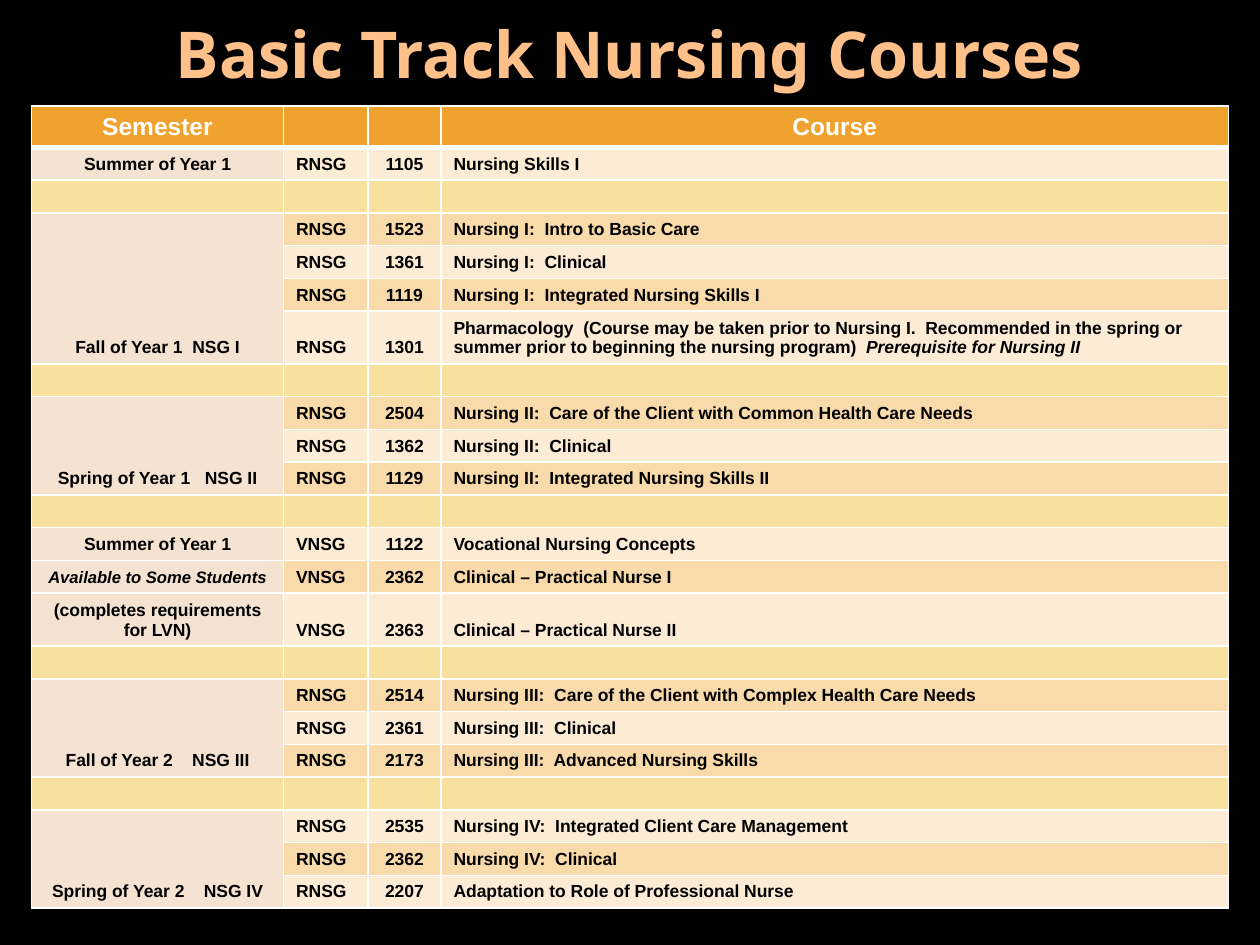
from dataclasses import dataclass
from typing import NamedTuple

from lxml import etree
from pptx import Presentation
from pptx.dml.color import RGBColor
from pptx.enum.text import MSO_ANCHOR, MSO_AUTO_SIZE, PP_ALIGN
from pptx.oxml.ns import qn
from pptx.util import Emu, Pt

CENTER, LEFT = PP_ALIGN.CENTER, PP_ALIGN.LEFT
MIDDLE, BOTTOM = MSO_ANCHOR.MIDDLE, MSO_ANCHOR.BOTTOM
NO_AUTOFIT = MSO_AUTO_SIZE.NONE
EMU_PER_PX = 9144


@dataclass(frozen=True)
class Theme:
    background: str = "000000"
    title: str = "FFC089"
    header: str = "F0A22E"
    header_text: str = "FFFFFF"
    text: str = "000000"
    semester: str = "F5E3D1"
    gap: str = "F8E19F"
    bands: tuple[str, str] = ("FCECD5", "F9DAAB")
    border: str = "FFFFFF"
    title_font: str = "Noto Sans"
    table_font: str = "Arial"
    title_size: float = 36.9
    header_size: float = 14
    body_size: float = 10
    note_size: float = 9.5
    border_width: float = 1
    header_rule: float = 3


class Course(NamedTuple):
    prefix: str
    number: str
    name: str
    note: str = ""


class Label(NamedTuple):
    text: str
    italic: bool = False


class Semester(NamedTuple):
    labels: list[Label]
    courses: list[Course]


THEME = Theme()
COLUMNS = (200, 67, 58, 625)
HEADER_HEIGHT, ROW_HEIGHT, TALL_HEIGHT = 33, 26, 42
TALL_COURSES = {"1301", "2363"}
HEADINGS = ("Semester", "", "", "Course")
SEMESTERS = [
    Semester([Label("Summer of Year 1")], [Course("RNSG", "1105", "Nursing Skills I")]),
    Semester([Label("Fall of Year 1  NSG I")], [
        Course("RNSG", "1523", "Nursing I:  Intro to Basic Care"),
        Course("RNSG", "1361", "Nursing I:  Clinical"),
        Course("RNSG", "1119", "Nursing I:  Integrated Nursing Skills I"),
        Course("RNSG", "1301",
               "Pharmacology  (Course may be taken prior to Nursing I.  Recommended in the "
               "spring or summer prior to beginning the nursing program)  ",
               "Prerequisite for Nursing II"),
    ]),
    Semester([Label("Spring of Year 1   NSG II")], [
        Course("RNSG", "2504", "Nursing II:  Care of the Client with Common Health Care Needs"),
        Course("RNSG", "1362", "Nursing II:  Clinical"),
        Course("RNSG", "1129", "Nursing II:  Integrated Nursing Skills II"),
    ]),
    Semester([
        Label("Summer of Year 1"),
        Label("Available to Some Students", True),
        Label("(completes requirements for LVN)"),
    ], [
        Course("VNSG", "1122", "Vocational Nursing Concepts"),
        Course("VNSG", "2362", "Clinical – Practical Nurse I"),
        Course("VNSG", "2363", "Clinical – Practical Nurse II"),
    ]),
    Semester([Label("Fall of Year 2    NSG III")], [
        Course("RNSG", "2514", "Nursing III:  Care of the Client with Complex Health Care Needs"),
        Course("RNSG", "2361", "Nursing III:  Clinical"),
        Course("RNSG", "2173", "Nursing III:  Advanced Nursing Skills"),
    ]),
    Semester([Label("Spring of Year 2    NSG IV")], [
        Course("RNSG", "2535", "Nursing IV:  Integrated Client Care Management"),
        Course("RNSG", "2362", "Nursing IV:  Clinical"),
        Course("RNSG", "2207", "Adaptation to Role of Professional Nurse"),
    ]),
]


def px(n: int) -> Emu:
    return Emu(n * EMU_PER_PX)


def rgb(color: str) -> RGBColor:
    return RGBColor.from_string(color)


def set_font(p, name: str, size: float, color: str, italic: bool = False) -> None:
    f = p.font
    f.name, f.size, f.bold, f.italic = name, Pt(size), True, italic
    f.color.rgb = rgb(color)


def set_borders(cell, top: float, bottom: float) -> None:
    tcPr = cell._tc.get_or_add_tcPr()
    side = THEME.border_width
    for tag, width in (("lnL", side), ("lnR", side), ("lnT", top), ("lnB", bottom)):
        ln = etree.SubElement(tcPr, qn(f"a:{tag}"), w=str(Pt(width)))
        fill = etree.SubElement(ln, qn("a:solidFill"))
        etree.SubElement(fill, qn("a:srgbClr"), val=THEME.border)


def fill_cell(cell, text: str, fill: str, align=CENTER, color: str = THEME.text,
              size: float = THEME.body_size, italic: bool = False, note: str = "",
              top: float = THEME.border_width, bottom: float = THEME.border_width) -> None:
    set_borders(cell, top, bottom)
    cell.fill.solid()
    cell.fill.fore_color.rgb = rgb(fill)
    cell.vertical_anchor = BOTTOM
    p = cell.text_frame.paragraphs[0]
    p.alignment = align
    set_font(p, THEME.table_font, size, color, italic)
    if text:
        p.add_run().text = text
    if note:
        r = p.add_run()
        r.text = note
        r.font.italic = True


def add_title(s, text: str) -> None:
    sp = s.shapes.title
    sp.left, sp.top, sp.width, sp.height = px(50), px(17), px(900), px(50)
    tf = sp.text_frame
    tf.text = text
    tf.word_wrap, tf.auto_size, tf.vertical_anchor = True, NO_AUTOFIT, MIDDLE
    p = tf.paragraphs[0]
    p.alignment = CENTER
    set_font(p, THEME.title_font, THEME.title_size, THEME.title)


def add_course_table(s, semesters: list[Semester]) -> None:
    heights = [HEADER_HEIGHT]
    for i, semester in enumerate(semesters):
        if i:
            heights.append(ROW_HEIGHT)
        heights += [TALL_HEIGHT if c.number in TALL_COURSES else ROW_HEIGHT
                    for c in semester.courses]
    table = s.shapes.add_table(len(heights), len(COLUMNS), px(25), px(84),
                               px(sum(COLUMNS)), px(sum(heights))).table
    table.horz_banding = False
    for column, width in zip(table.columns, COLUMNS):
        column.width = px(width)
    for row, height in zip(table.rows, heights):
        row.height = px(height)
    for col, heading in enumerate(HEADINGS):
        fill_cell(table.cell(0, col), heading, THEME.header, color=THEME.header_text,
                  size=THEME.header_size, bottom=THEME.header_rule)

    row, band = 1, 0
    for i, semester in enumerate(semesters):
        if i:
            for col in range(len(COLUMNS)):
                fill_cell(table.cell(row, col), "", THEME.gap)
            row += 1
        first = row
        for k, course in enumerate(semester.courses):
            top = THEME.header_rule if row == 1 else THEME.border_width
            label = semester.labels[k] if k < len(semester.labels) else Label("")
            fill_cell(table.cell(row, 0), label.text, THEME.semester, italic=label.italic,
                      size=THEME.note_size if label.italic else THEME.body_size, top=top)
            fill = THEME.bands[band % 2]
            fill_cell(table.cell(row, 1), course.prefix, fill, LEFT, top=top)
            fill_cell(table.cell(row, 2), course.number, fill, top=top)
            fill_cell(table.cell(row, 3), course.name, fill, LEFT, note=course.note, top=top)
            row, band = row + 1, band + 1
        if len(semester.labels) < len(semester.courses):
            table.cell(first, 0).merge(table.cell(row - 1, 0))


def main() -> None:
    prs = Presentation()
    prs.slide_width, prs.slide_height = px(1000), px(750)
    s = prs.slides.add_slide(prs.slide_layouts[5])
    s.background.fill.solid()
    s.background.fill.fore_color.rgb = rgb(THEME.background)
    add_title(s, "Basic Track Nursing Courses")
    add_course_table(s, SEMESTERS)
    prs.save("out.pptx")


if __name__ == "__main__":
    main()
